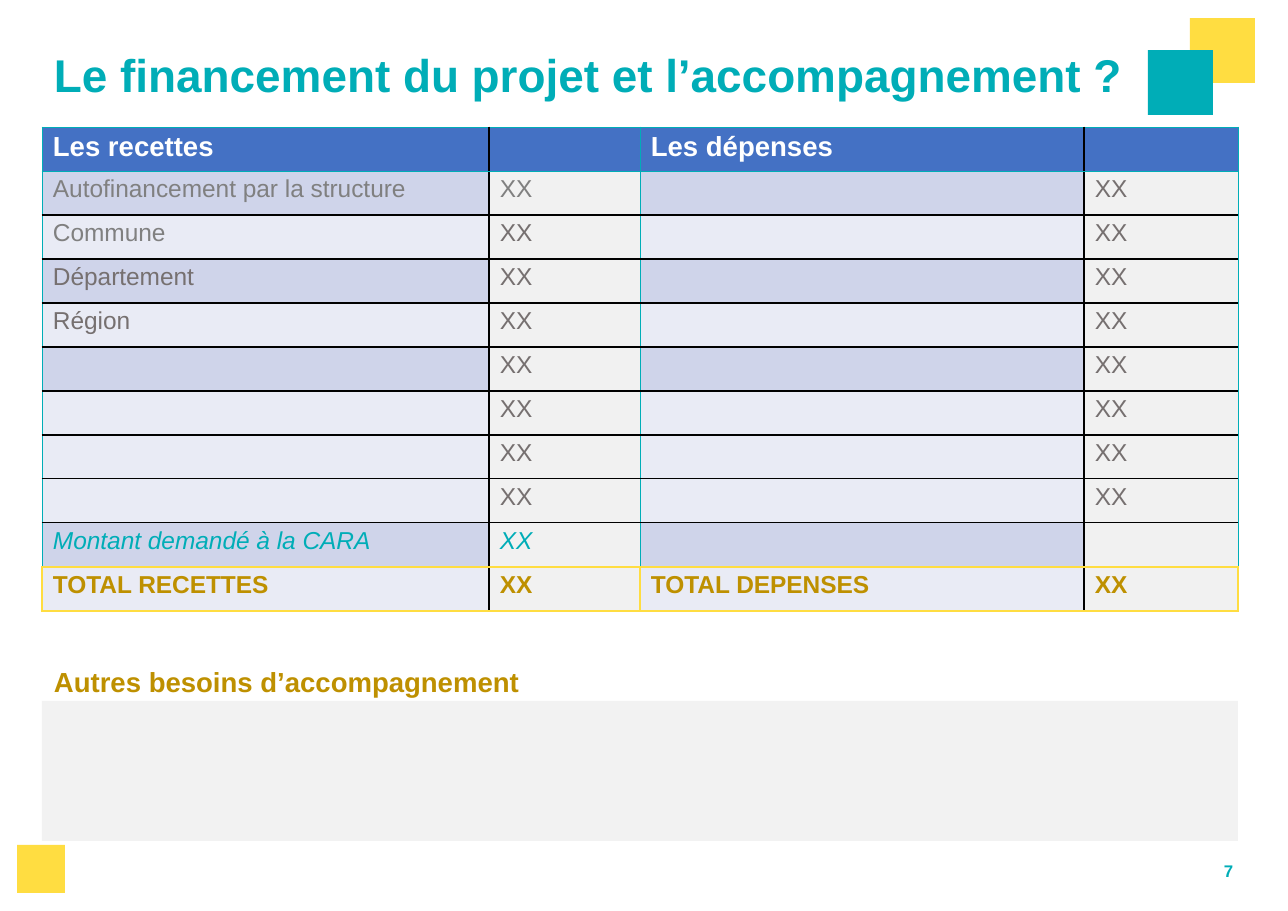
from lxml import etree
from pptx import Presentation
from pptx import util as u
from pptx.dml.color import RGBColor
from pptx.enum import shapes, text
from pptx.oxml.ns import qn

PX = 8300
TEAL, YELLOW, GOLD = "00ADB7", "FFDD41", "BE9000"
BLUE, LILAC, PALE = "4471C4", "CFD4EA", "E9EBF5"
GREY, WARM_GREY, AMOUNT = "808080", "767070", "F1F1F1"

COLUMN_WIDTHS = (447, 151, 444, 154)
ROW_HEIGHT = 44
LILAC_ROWS = (1, 3, 5, 9)
BUDGET = [
    ("Les recettes", "", "Les dépenses", ""),
    ("Autofinancement par la structure", "XX", "", "XX"),
    ("Commune", "XX", "", "XX"),
    ("Département", "XX", "", "XX"),
    ("Région", "XX", "", "XX"),
    *[("", "XX", "", "XX")] * 4,
    ("Montant demandé à la CARA", "XX", "", ""),
    ("TOTAL RECETTES", "XX", "TOTAL DEPENSES", "XX"),
]
TOTAL = len(BUDGET) - 1
REQUEST = TOTAL - 1


def px(length):
    return u.Emu(length * PX)


def rgb(colour):
    return RGBColor.from_string(colour)


def style(paragraph, size, colour, bold=False, italic=False, before=0):
    paragraph.space_before = u.Pt(before)
    font = paragraph.font
    font.name, font.size = "Arial", u.Pt(size)
    font.bold, font.italic = bold, italic
    font.color.rgb = rgb(colour)


def write(holder, box, words, size, colour):
    holder.left, holder.top, holder.width, holder.height = map(px, box)
    frame = holder.text_frame
    frame.margin_left = frame.margin_top = px(1)
    frame.margin_right = frame.margin_bottom = 0
    frame.word_wrap = True
    frame.auto_size = text.MSO_AUTO_SIZE.NONE
    frame.vertical_anchor = text.MSO_ANCHOR.TOP
    paragraph = frame.paragraphs[0]
    paragraph.text = words
    paragraph.alignment = text.PP_ALIGN.LEFT
    style(paragraph, size, colour, bold=True, before=1)


def add_label(slide, box, words, size, colour):
    label = slide.shapes.add_textbox(*map(px, box))
    write(label, box, words, size, colour)


def add_block(slide, box, colour):
    block = slide.shapes.add_shape(shapes.MSO_SHAPE.RECTANGLE, *map(px, box))
    block.shadow.inherit = False
    block.fill.solid()
    block.fill.fore_color.rgb = rgb(colour)
    block.line.fill.background()


def add_corner_squares(slide, width, height):
    add_block(slide, (17, height - 66, 48, 48), YELLOW)
    add_block(slide, (width - 98, 18, 65, 65), YELLOW)
    add_block(slide, (width - 140, 50, 65, 65), TEAL)


def cell_fill(row, column):
    if row == 0:
        return BLUE
    if column % 2:
        return AMOUNT
    return LILAC if row in LILAC_ROWS else PALE


def cell_font(row, column):
    if row == 0:
        return dict(size=18, colour="FFFFFF", bold=True)
    if row == TOTAL:
        return dict(size=16, colour=GOLD, bold=True)
    if row == REQUEST and column < 2:
        return dict(size=16, colour=TEAL, italic=True)
    grey = (row, column) in ((1, 0), (1, 1), (2, 0))
    return dict(size=16, colour=GREY if grey else WARM_GREY)


def cell_borders(row, column):
    thin, black, accent = (TEAL, 0.5), ("000000", 1), (YELLOW, 1.5)
    outer = accent if row == TOTAL else thin
    top = accent if row == TOTAL else thin if row < 2 else black
    bottom = accent if row >= REQUEST else thin if row == 0 else black
    left, right = (black, outer) if column % 2 else (outer, black)
    return zip(("a:lnL", "a:lnR", "a:lnT", "a:lnB"), (left, right, top, bottom))


def draw_borders(cell, row, column):
    properties = cell._tc.get_or_add_tcPr()
    for place, (side, (colour, width)) in enumerate(cell_borders(row, column)):
        border = etree.Element(qn(side), w=str(u.Pt(width)))
        fill = etree.SubElement(border, qn("a:solidFill"))
        etree.SubElement(fill, qn("a:srgbClr"), val=colour)
        properties.insert(place, border)


def add_budget(slide, left, top):
    rows, columns = len(BUDGET), len(COLUMN_WIDTHS)
    box = (left, top, sum(COLUMN_WIDTHS), ROW_HEIGHT * rows)
    budget = slide.shapes.add_table(rows, columns, *map(px, box)).table
    budget.first_row = budget.horz_banding = False
    for column, width in enumerate(COLUMN_WIDTHS):
        budget.columns[column].width = px(width)
    for row, entries in enumerate(BUDGET):
        budget.rows[row].height = px(ROW_HEIGHT)
        for column, entry in enumerate(entries):
            cell = budget.cell(row, column)
            cell.margin_left, cell.margin_top = px(11), px(5)
            cell.margin_right = cell.margin_bottom = 0
            cell.fill.solid()
            cell.fill.fore_color.rgb = rgb(cell_fill(row, column))
            paragraph = cell.text_frame.paragraphs[0]
            paragraph.text = entry
            style(paragraph, before=3.2, **cell_font(row, column))
            draw_borders(cell, row, column)


def add_needs(slide, left, top, width):
    add_label(slide, (left + 11, top, 468, 37), "Autres besoins d’accompagnement", 18, GOLD)
    add_block(slide, (left, top + 37, width, 140), "F2F2F2")


def build_funding_slide(deck, width, height):
    slide = deck.slides.add_slide(deck.slide_layouts[5])
    add_corner_squares(slide, width, height)
    write(slide.shapes.title, (53, 46, 1072, 58),
          "Le financement du projet et l’accompagnement ?", 30, TEAL)
    add_budget(slide, 42, 127)
    add_needs(slide, 42, 664, sum(COLUMN_WIDTHS))
    add_label(slide, (1223, 860, 19, 22), "7", 11, TEAL)


def main():
    width, height = 1288, 911
    deck = Presentation()
    deck.slide_width, deck.slide_height = px(width), px(height)
    build_funding_slide(deck, width, height)
    deck.save("out.pptx")


if __name__ == "__main__":
    main()
